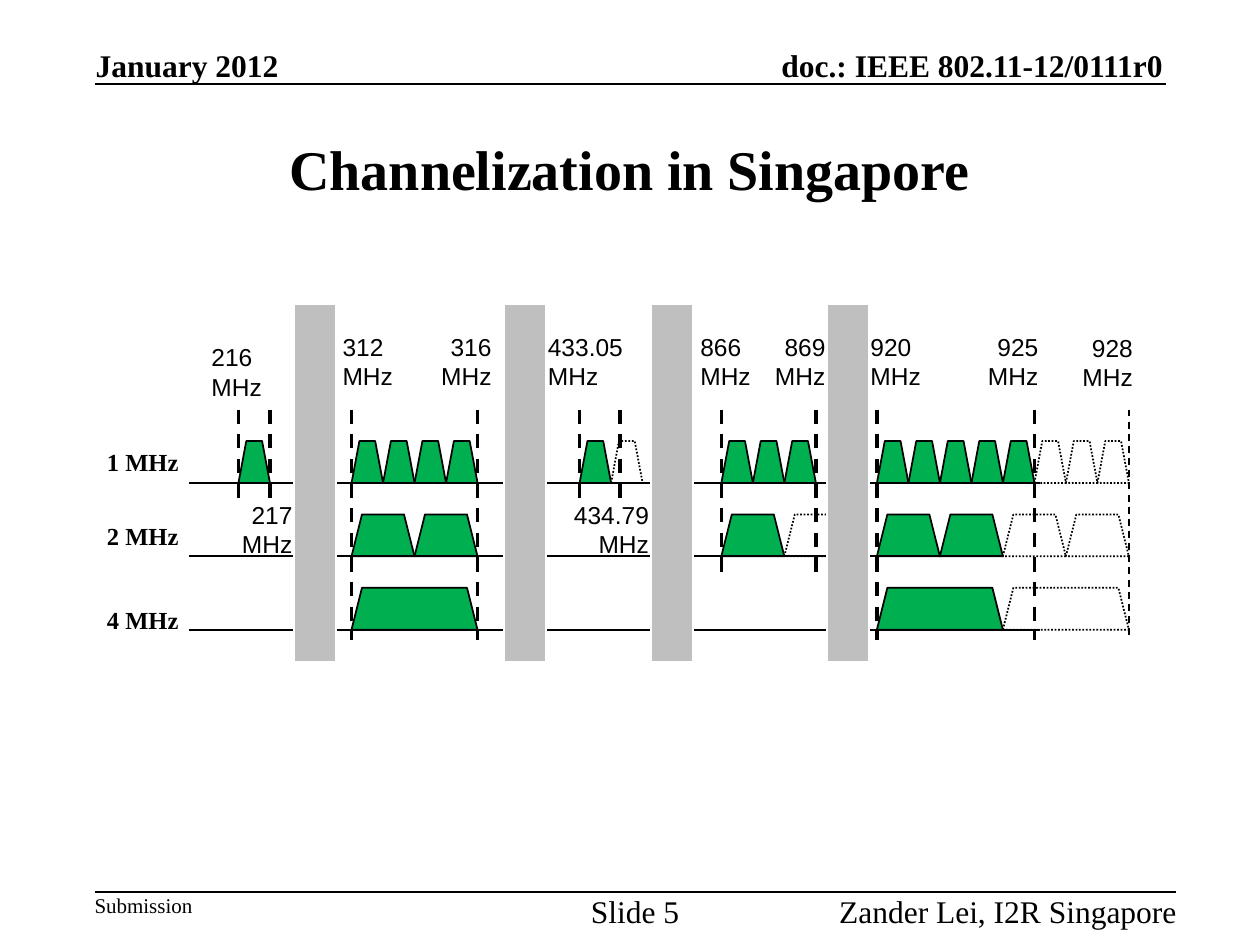
from dataclasses import dataclass

from lxml.etree import SubElement
from pptx import Presentation
from pptx.dml.color import RGBColor
from pptx.enum.dml import MSO_LINE_DASH_STYLE as Dash
from pptx.enum.shapes import MSO_CONNECTOR, MSO_SHAPE as Shape
from pptx.enum.text import MSO_ANCHOR as Anchor, MSO_AUTO_SIZE as AutoSize, PP_ALIGN as Align
from pptx.oxml.ns import qn
from pptx.util import Inches, Length, Pt

BLACK = RGBColor(0, 0, 0)
WHITE = RGBColor(255, 255, 255)
GREEN = RGBColor(0x00, 0xB0, 0x50)
GRAY = RGBColor(0xBF, 0xBF, 0xBF)
SERIF, SANS = "Times New Roman", "Arial"

# The slide is a grid of 40 columns by 30 rows; one column is 1 MHz wide.
COLUMNS, ROWS = 40, 30
CHANNEL_HEIGHT = 1.33
WIDTHS_MHZ = (1, 2, 4)
CHANNEL_TOPS = (14, 16.33, 18.66)
BASELINE_ENDS = (33, 31.84, 33)
EDGE_TOP = 13
BREAK_LEFTS = (9.33, 16, 20.67, 26.25)


@dataclass(frozen=True)
class Band:
    """Counts are (allocated, future) channels for each channel width."""
    left: float
    span: float
    edge_bottom: float
    counts: tuple[tuple[int, int], ...]


@dataclass(frozen=True)
class Label:
    lines: tuple[str, ...]
    left: float
    top: float
    width: float
    height: float
    size: int = 14
    font: str = SANS
    bold: bool = False
    align: Align = Align.LEFT
    anchor: Anchor = Anchor.TOP
    padded: bool = True
    wrap: bool = False


def frequency(value: str, left: float, top: float = 10.33,
              align: Align = Align.LEFT, width: float = 2.44) -> Label:
    return Label((value, "MHz"), left, top, width, 2.28, align=align)


def margin_text(text: str, left: float, top: float, width: float, height: float,
                size: int = 18, **style) -> Label:
    return Label((text,), left, top, width, height, size, SERIF, padded=False, **style)


BANDS = (
    Band(27.84, 5, 20.33, ((5, 3), (2, 2), (1, 1))),
    Band(22.9, 3, 18.33, ((3, 0), (1, 1))),
    Band(18.4, 1.28, 16, ((1, 1),)),
    Band(11.16, 4, 20.33, ((4, 0), (2, 0), (1, 0))),
    Band(7.57, 1, 16, ((1, 0),)),
)

PAGE_TEXTS = (
    margin_text("doc.: IEEE 802.11-12/0111r0", 22.68, 1.46, 14.24, 1.2,
                bold=True, align=Align.RIGHT, anchor=Anchor.BOTTOM),
    margin_text("January 2012", 3.04, 1.46, 5.88, 1.2, bold=True, anchor=Anchor.BOTTOM),
    Label(("Channelization in Singapore",), 3, 3, 34, 4.68, 32, SERIF, True,
          Align.CENTER, Anchor.MIDDLE, wrap=True),
    margin_text("Submission", 3, 28.32, 3.12, 0.8, 12),
    margin_text("Slide 5", 18.16, 28.32, 4, 1.1, align=Align.CENTER),
    margin_text("Zander Lei, I2R Singapore", 25.36, 28.32, 12, 1.1, align=Align.RIGHT),
)

ROW_LABELS = tuple(
    Label((f"{width} MHz",), 3, top, 3.12, 1.36, font=SERIF, bold=True)
    for width, top in zip(WIDTHS_MHZ, (14, 16.33, 19)))

FREQUENCIES = (
    frequency("216", 6.32, 10.67),
    frequency("217", 7.24, 15.67, Align.RIGHT),
    frequency("312", 10.48),
    frequency("316", 13.56, align=Align.RIGHT),
    frequency("433.05", 17, width=3.2),
    frequency("434.79", 17.8, 15.67, Align.RIGHT, 3.2),
    frequency("866", 21.84),
    frequency("869", 24.16, align=Align.RIGHT),
    frequency("920", 27.24),
    frequency("925", 30.92, align=Align.RIGHT),
    frequency("928", 33.92, 10.36, Align.RIGHT),
)

deck = Presentation()
deck.slide_width, deck.slide_height = Inches(10), Inches(7.5)
page = deck.slides.add_slide(deck.slide_layouts[6])


def across(columns: float) -> Length:
    return Length(round(deck.slide_width * columns / COLUMNS))


def down(rows: float) -> Length:
    return Length(round(deck.slide_height * rows / ROWS))


def add_label(label: Label) -> None:
    box = page.shapes.add_textbox(across(label.left), down(label.top),
                                  across(label.width), down(label.height))
    frame = box.text_frame
    frame.word_wrap = label.wrap
    frame.auto_size = AutoSize.NONE if label.wrap else AutoSize.SHAPE_TO_FIT_TEXT
    frame.vertical_anchor = label.anchor
    if not label.padded:
        frame.margin_left = frame.margin_right = frame.margin_top = frame.margin_bottom = 0
    para = frame.paragraphs[0]
    para.alignment = label.align
    for index, text in enumerate(label.lines):
        if index:
            para.add_line_break()
        span = para.add_run()
        span.text = text
        span.font.name, span.font.size = label.font, Pt(label.size)
        span.font.bold, span.font.color.rgb = label.bold, BLACK


def add_line(left: float, top: float, right: float, bottom: float,
             weight: float = 1, dash: Dash | None = None) -> None:
    line = page.shapes.add_connector(MSO_CONNECTOR.STRAIGHT, across(left), down(top),
                                     across(right), down(bottom))
    line.line.color.rgb, line.line.width = BLACK, Pt(weight)
    if dash:
        line.line.dash_style = dash
    SubElement(line._element.spPr, qn("a:effectLst"))


def add_block(kind: Shape, left: float, top: float, width: float, height: float,
              fill: RGBColor | None, outline: RGBColor) -> None:
    """Draw a filled block, or a dotted outline when there is no fill."""
    block = page.shapes.add_shape(kind, across(left), down(top), across(width), down(height))
    block.shadow.inherit = False
    block.line.color.rgb, block.line.width = outline, Pt(1)
    if fill is None:
        block.fill.background()
        block.line.dash_style = Dash.ROUND_DOT
    else:
        block.fill.solid()
        block.fill.fore_color.rgb = fill


def add_band(band: Band) -> None:
    for width, top, (allocated, future) in zip(WIDTHS_MHZ, CHANNEL_TOPS, band.counts):
        for index in range(allocated + future):
            add_block(Shape.TRAPEZOID, band.left + index * width, top, width, CHANNEL_HEIGHT,
                      GREEN if index < allocated else None, BLACK)
    for edge in (band.left, band.left + band.span):
        add_line(edge, EDGE_TOP, edge, band.edge_bottom, 2, Dash.DASH)


add_line(3, 2.67, 37, 2.67)
add_line(3, 28.32, 37.33, 28.32)
add_line(35.84, EDGE_TOP, 35.84, 20.33, 1, Dash.DASH)
for band in BANDS:
    add_band(band)
for top, end in zip(CHANNEL_TOPS, BASELINE_ENDS):
    add_line(6, top + CHANNEL_HEIGHT, end, top + CHANNEL_HEIGHT)
for left in BREAK_LEFTS:
    add_block(Shape.RECTANGLE, left, 9.67, 1.33, 11.33, GRAY, WHITE)
for label in PAGE_TEXTS + ROW_LABELS + FREQUENCIES:
    add_label(label)

deck.save("out.pptx")
